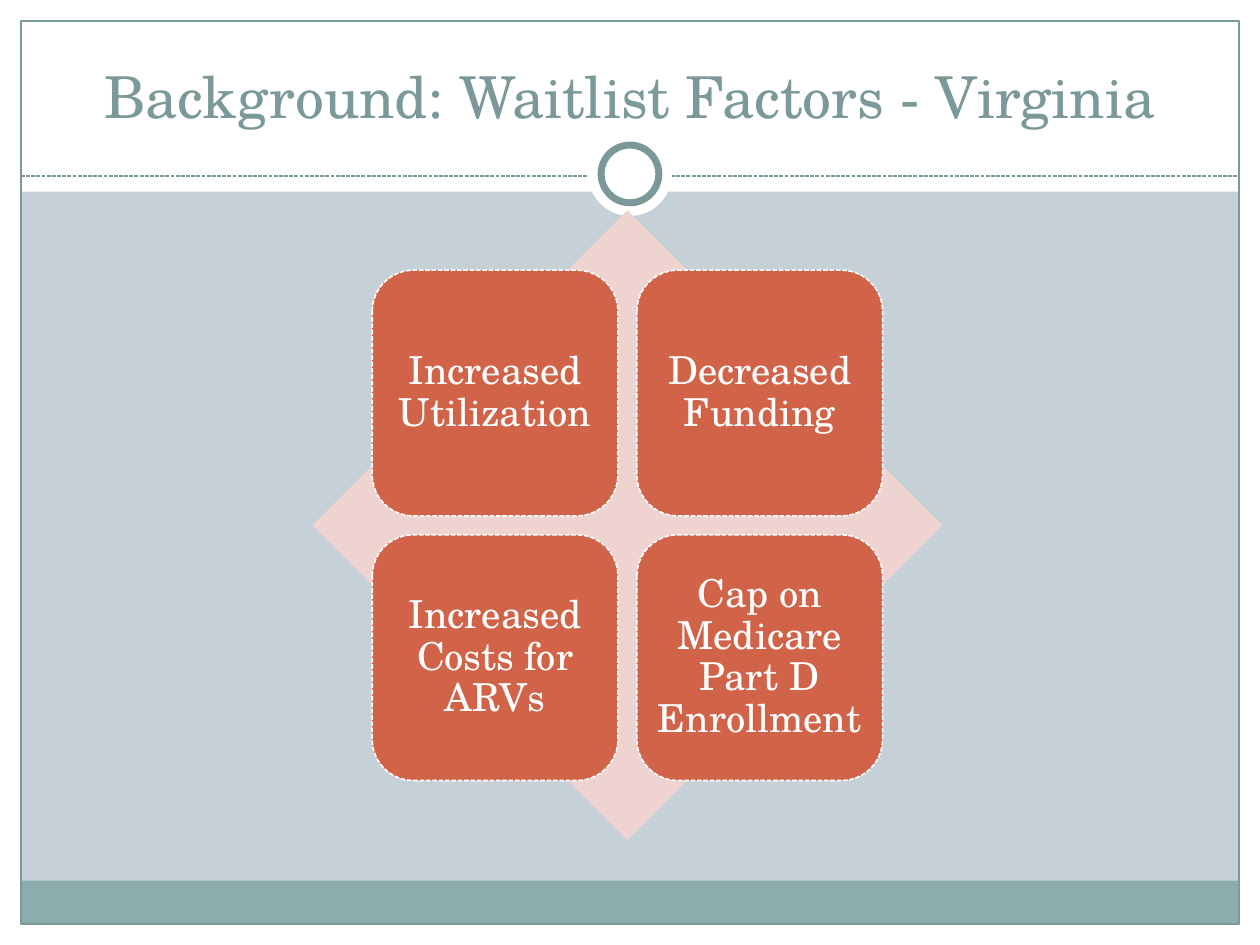
from pptx import Presentation
from pptx.dml.color import RGBColor
from pptx.enum.dml import MSO_LINE
from pptx.enum.shapes import MSO_CONNECTOR, MSO_SHAPE
from pptx.enum.text import MSO_ANCHOR, MSO_AUTO_SIZE, PP_ALIGN
from pptx.oxml.ns import qn
from pptx.util import Pt
from lxml.etree import SubElement

TITLE = "Background: Waitlist Factors - Virginia"
FACTORS = [
    ["Increased Utilization", "Decreased Funding"],
    ["Increased Costs for ARVs", "Cap on Medicare Part D Enrollment"],
]
FONT = "TeX Gyre Schola"
COLORS = {
    "back": "C5D1D7",
    "white": "FFFFFF",
    "band": "8CADAE",
    "trim": "7C999A",
    "pale": "EED3D0",
    "box": "D16349",
}
WIDE, HIGH, EDGE = 720, 540, 12
RULE_Y = 100.6
MID_X, MID_Y = 358.5, 300.2
SPAN, SIDE, GAP = 360, 140.4, 10.8

BANDS = [
    (0, HIGH - EDGE, WIDE, EDGE, "white"),
    (0, 0, WIDE, 109.5, "white"),
    (0, 0, EDGE, HIGH, "white"),
    (WIDE - EDGE, 0, EDGE, HIGH, "white"),
    (EDGE, 503.2, WIDE - 2 * EDGE, 24.6, "band"),
]


def shade(name):
    return RGBColor.from_string(COLORS[name])


def draw(kind, x, y, w, h, fill=None, line=None, width=0.75):
    shape = slide.shapes.add_shape(kind, Pt(x), Pt(y), Pt(w), Pt(h))
    shape.shadow.inherit = False
    if fill:
        shape.fill.solid()
        shape.fill.fore_color.rgb = shade(fill)
    else:
        shape.fill.background()
    if line:
        shape.line.color.rgb = shade(line)
        shape.line.width = Pt(width)
    else:
        shape.line.fill.background()
    return shape


def write(shape, text, size, color, anchor):
    frame = shape.text_frame
    frame.text = text
    frame.word_wrap = True
    frame.auto_size = MSO_AUTO_SIZE.NONE
    frame.vertical_anchor = anchor
    par = frame.paragraphs[0]
    par.alignment = PP_ALIGN.CENTER
    par.font.name = FONT
    par.font.size = Pt(size)
    par.font.color.rgb = shade(color)
    return frame


deck = Presentation()
deck.slide_width, deck.slide_height = Pt(WIDE), Pt(HIGH)
slide = deck.slides.add_slide(deck.slide_layouts[5])
slide.background.fill.solid()
slide.background.fill.fore_color.rgb = shade("back")

for x, y, w, h, fill in BANDS:
    draw(MSO_SHAPE.RECTANGLE, x, y, w, h, fill)
draw(MSO_SHAPE.RECTANGLE, EDGE, EDGE, WIDE - 2 * EDGE, HIGH - 2 * EDGE, line="trim")

rule = slide.shapes.add_connector(
    MSO_CONNECTOR.STRAIGHT, Pt(EDGE), Pt(RULE_Y), Pt(WIDE - EDGE), Pt(RULE_Y)
)
rule.line.color.rgb = shade("trim")
rule.line.width = Pt(0.75)
rule.line.dash_style = MSO_LINE.SQUARE_DOT
SubElement(rule.element.spPr, qn("a:effectLst"))

for size, line in [(48, None), (33, "trim")]:
    x, y = (WIDE - size) / 2, 99.4 - size / 2
    draw(MSO_SHAPE.OVAL, x, y, size, size, "white", line, 4)

title = slide.shapes.title
title.left, title.top, title.width, title.height = Pt(24), Pt(18), Pt(672), Pt(60)
write(title, TITLE, 33, "trim", MSO_ANCHOR.BOTTOM)
title.element.getparent().append(title.element)

draw(MSO_SHAPE.DIAMOND, MID_X - SPAN / 2, MID_Y - SPAN / 2, SPAN, SPAN, "pale")

for row, texts in enumerate(FACTORS):
    for col, text in enumerate(texts):
        x = MID_X - SIDE - GAP / 2 + col * (SIDE + GAP)
        y = MID_Y - SIDE - GAP / 2 + row * (SIDE + GAP)
        box = draw(MSO_SHAPE.ROUNDED_RECTANGLE, x, y, SIDE, SIDE, "box", "white", 0.9)
        box.line.dash_style = MSO_LINE.SQUARE_DOT
        frame = write(box, text, 22, "white", MSO_ANCHOR.MIDDLE)
        frame.margin_left = frame.margin_right = 0
        frame.margin_top = frame.margin_bottom = 0
        frame.paragraphs[0].line_spacing = 0.9

deck.save("out.pptx")
